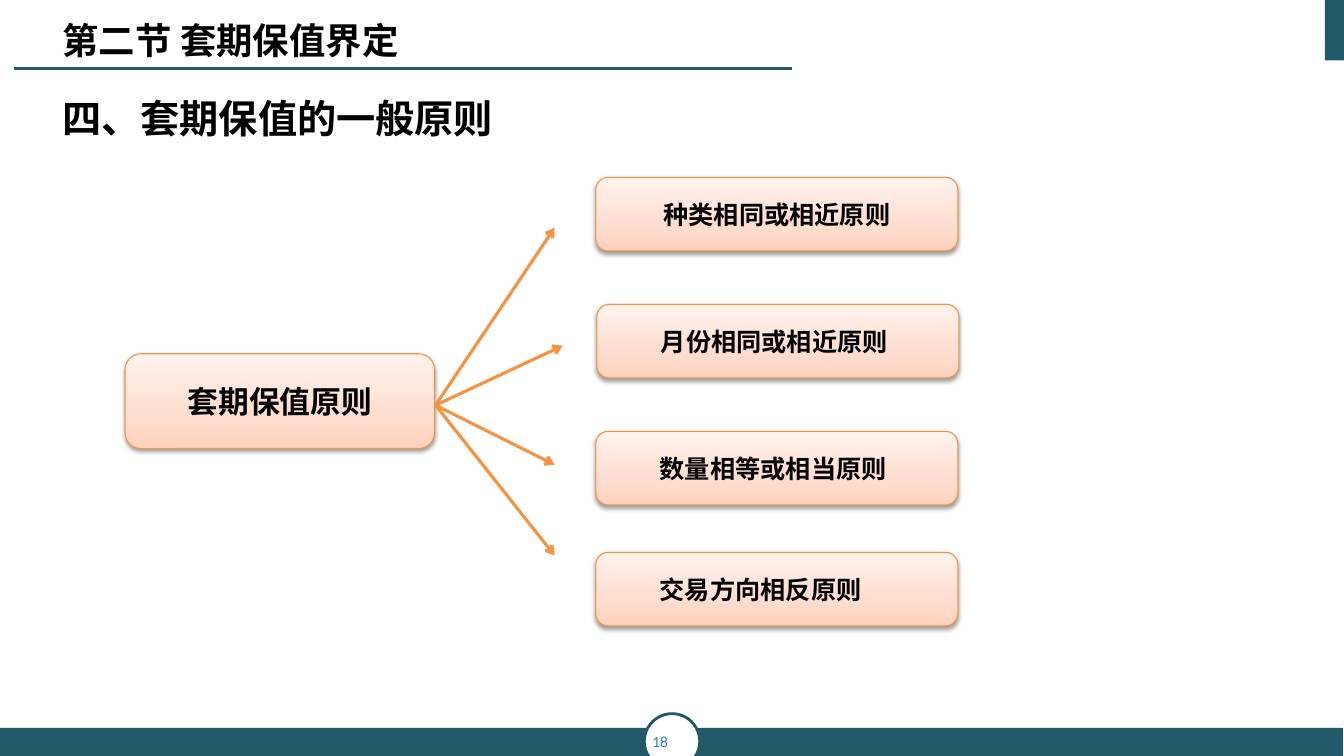
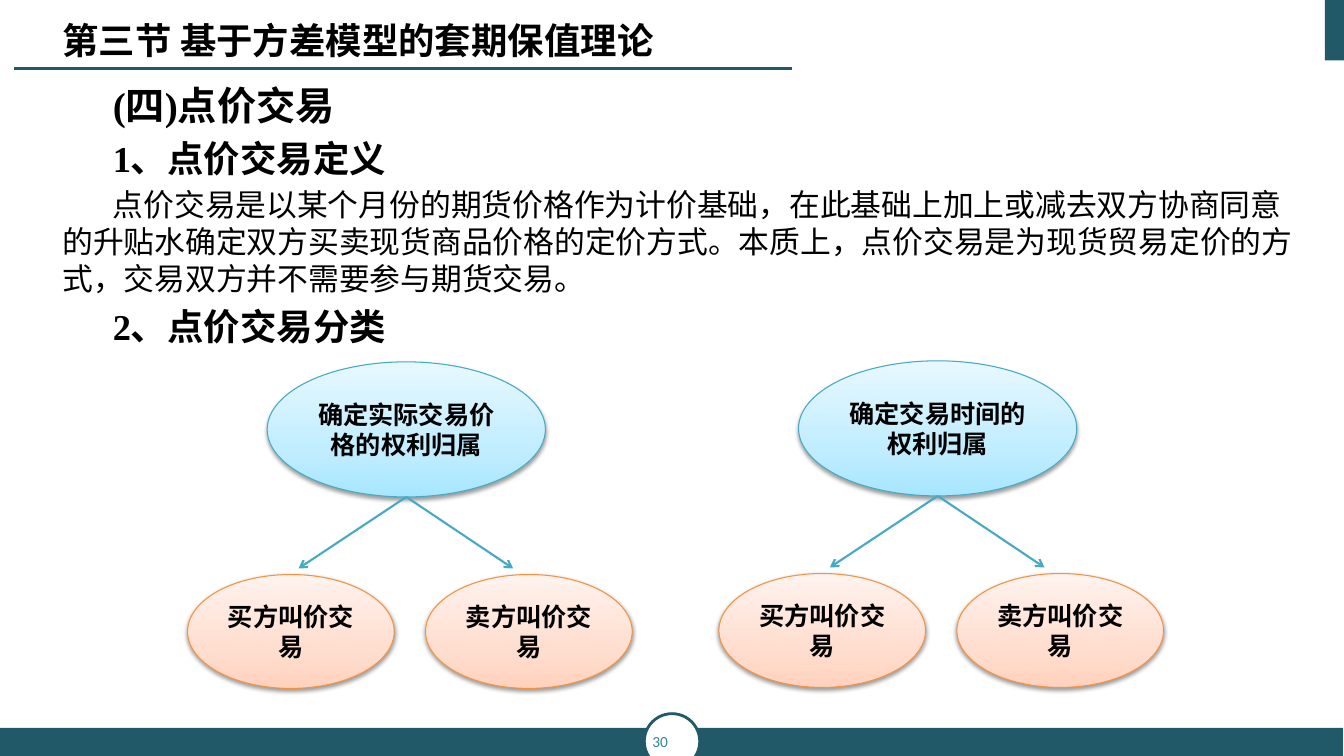
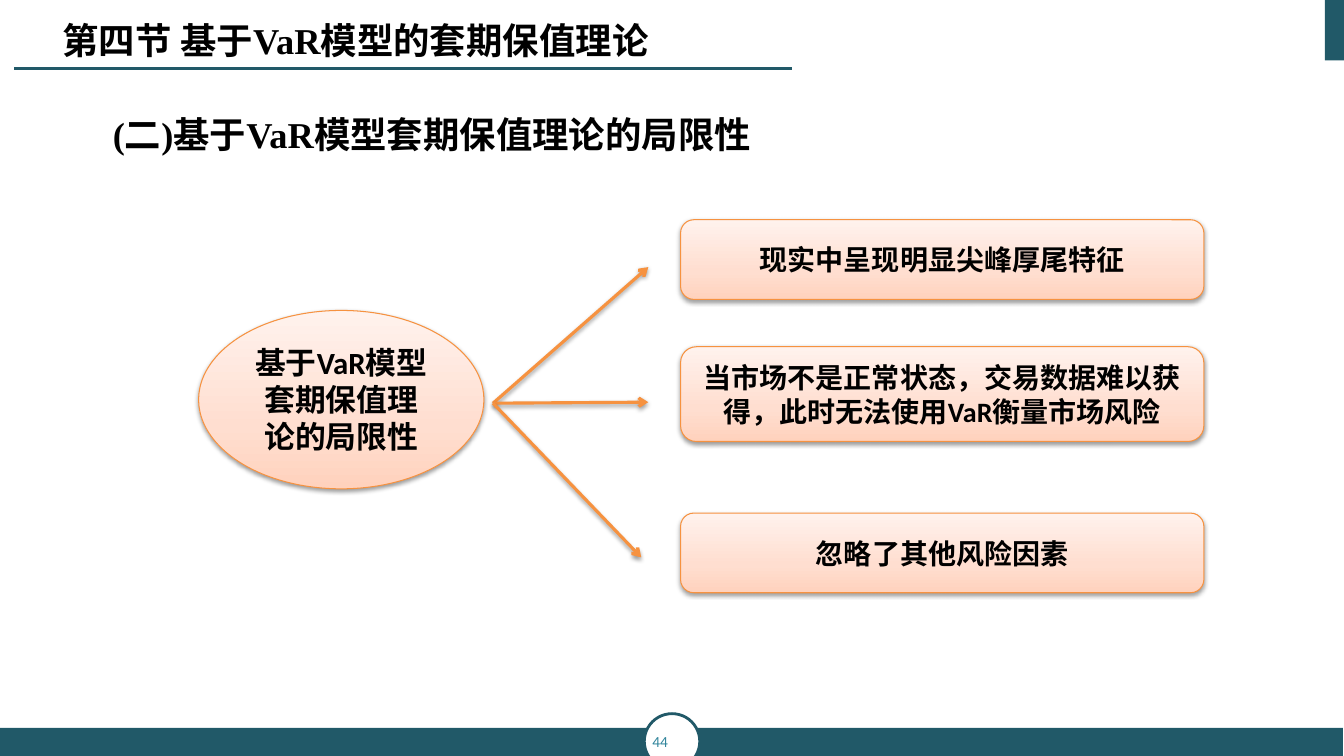
from pptx import Presentation
from pptx.dml.color import RGBColor
from pptx.enum.shapes import MSO_CONNECTOR as Link, MSO_SHAPE as Kind
from pptx.enum.text import MSO_ANCHOR as Anchor, MSO_AUTO_SIZE as Fit, PP_ALIGN as Align
from pptx.oxml import parse_xml
from pptx.oxml.ns import nsdecls, qn
from pptx.util import Inches, Pt
from lxml.etree import SubElement

TEAL = RGBColor(0x21, 0x59, 0x68)
AQUA = RGBColor(0x31, 0x85, 0x9C)
BLACK = RGBColor(0, 0, 0)
WHITE = RGBColor(0xFF, 0xFF, 0xFF)
ORANGE = RGBColor(0xF6, 0x92, 0x40)
BLUE = RGBColor(0x46, 0xAA, 0xC5)
PEACH = [RGBColor(0xFF, 0xD2, 0xBD), RGBColor(0xFF, 0xDE, 0xD0), RGBColor(0xFF, 0xF2, 0xED)]
SKY = [RGBColor(0xA7, 0xE6, 0xFF), RGBColor(0xC1, 0xED, 0xFF), RGBColor(0xE7, 0xF8, 0xFF)]
STOPS = [0, 35000, 100000]
SANS, SERIF, BODY = "Noto Sans CJK SC", "Times New Roman", "Calibri"
SHADOW = (
    f'<a:effectLst {nsdecls("a")}><a:outerShdw blurRad="40000" dist="20000" dir="5400000" rotWithShape="0">'
    '<a:srgbClr val="000000"><a:alpha val="38000"/></a:srgbClr></a:outerShdw></a:effectLst>'
)
PLAIN = f'<a:effectLst {nsdecls("a")}/>'


def style(par, size, face, bold=True, color=BLACK):
    font = par.font
    font.size, font.bold, font.name = Pt(size), bold, face
    font.color.rgb = color


deck = Presentation()
deck.slide_width, deck.slide_height = Inches(13.33), Inches(7.5)
layout = deck.slide_layouts[5]
head = layout.placeholders[0]
head.left, head.top, head.width, head.height = Inches(0.52), Inches(0.13), Inches(7.8), Inches(0.54)
head.text_frame.vertical_anchor = Anchor.TOP

titles = [
    (18, [("第二节 套期保值界定", SANS)]),
    (30, [("第三节 基于方差模型的套期保值理论", SANS)]),
    (44, [("第四节 基于", SANS), ("VaR", SERIF), ("模型的套期保值理论", SANS)]),
]
slides = [deck.slides.add_slide(layout) for _ in titles]

first = slides[0].shapes
for x, y, w, h in [(13.14, 0, 0.2, 0.6), (0, 7.22, 13.32, 0.28)]:
    band = first.add_shape(Kind.RECTANGLE, Inches(x), Inches(y), Inches(w), Inches(h))
    band.shadow.inherit = False
    band.fill.solid()
    band.fill.fore_color.rgb = TEAL
    band.line.fill.background()
    layout.shapes.element.append(band.element)
rule = first.add_connector(Link.STRAIGHT, Inches(0.14), Inches(0.68), Inches(7.86), Inches(0.68))
rule.line.color.rgb = TEAL
rule.line.width = Pt(1.5)
rule.element.spPr.append(parse_xml(PLAIN))
layout.shapes.element.append(rule.element)

for slide, (page, parts) in zip(slides, titles):
    frame = slide.shapes.title.text_frame
    frame.auto_size = Fit.NONE
    par = frame.paragraphs[0]
    par.alignment = Align.LEFT
    style(par, 26, parts[0][1])
    for text, face in parts:
        run = par.add_run()
        run.text = text
        if face != parts[0][1]:
            run.font.name = face
    disc = slide.shapes.add_shape(Kind.OVAL, Inches(6.39), Inches(7.08), Inches(0.55), Inches(0.55))
    disc.shadow.inherit = False
    disc.fill.solid()
    disc.fill.fore_color.rgb = WHITE
    disc.line.color.rgb = TEAL
    disc.line.width = Pt(2)
    disc.text_frame.margin_left = disc.text_frame.margin_right = 0
    disc.text_frame.text = str(page)
    style(disc.text_frame.paragraphs[0], 11, BODY, False, AQUA)

quote = (
    "点价交易是以某个月份的期货价格作为计价基础，在此基础上加上或减去双方协商同意的升贴水确定双方买卖现货商品价格的定价方式。"
    "本质上，点价交易是为现货贸易定价的方式，交易双方并不需要参与期货交易。"
)
texts = [
    (0.89, 4.8, 0.65, BODY, 0, 1, [("四、套期保值的一般原则", 28, True)]),
    (0.76, 12.52, 2.8, SERIF, 0.5, 1, [
        ("(四)点价交易", 28, True),
        ("1、点价交易定义", 26, True),
        (quote, 22, False),
        ("2、点价交易分类", 26, True),
    ]),
    (0.76, 12.52, 1, SERIF, 0.5, 1.7, [("(二)基于VaR模型套期保值理论的局限性", 26, True)]),
]
for slide, (y, w, h, face, dent, pitch, rows) in zip(slides, texts):
    frame = slide.shapes.add_textbox(Inches(0.52), Inches(y), Inches(w), Inches(h)).text_frame
    frame.word_wrap = True
    for n, (text, size, bold) in enumerate(rows):
        par = frame.add_paragraph() if n else frame.paragraphs[0]
        par.text = text
        par.line_spacing = pitch
        if n:
            par.space_before = Pt(size * 0.2)
        par._p.get_or_add_pPr().set("indent", str(Inches(dent)))
        style(par, size, face, bold)

ROUND, OVAL = Kind.ROUNDED_RECTANGLE, Kind.OVAL
cards = [
    (0, ROUND, 1.24, 3.51, 3.07, 0.94, "套期保值原则", 22, BODY, 0, PEACH, ORANGE),
    (2, OVAL, 1.97, 3.08, 2.83, 1.77, "基于VaR模型套期保值理论的局限性", 22, BODY, 0, PEACH, ORANGE),
]
for x, y, text, dent in [
    (5.91, 1.76, "种类相同或相近原则", 0),
    (5.92, 3.02, "月份相同或相近原则", 0.5),
    (5.91, 4.28, "数量相等或相当原则", 0.5),
    (5.91, 5.48, "交易方向相反原则", 0.5),
]:
    cards.append((0, ROUND, x, y, 3.59, 0.73, text, 18, BODY, dent, PEACH, ORANGE))
for y, h, face, text in [
    (2.18, 0.79, SERIF, "现实中呈现明显尖峰厚尾特征"),
    (3.44, 0.94, BODY, "当市场不是正常状态，交易数据难以获得，此时无法使用VaR衡量市场风险"),
    (5.09, 0.79, BODY, "忽略了其他风险因素"),
]:
    cards.append((2, ROUND, 6.75, y, 5.19, h, text, 20, face, 0, PEACH, ORANGE))

arrows = [
    (0, 4.32, 4.02, x, y, ORANGE, 2.25, PLAIN)
    for x, y in [(5.5, 2.26), (5.58, 3.43), (5.5, 4.61), (5.5, 5.51)]
]
arrows += [
    (2, 4.89, 4, x, y, ORANGE, 2.25, SHADOW)
    for x, y in [(6.43, 2.65), (6.43, 3.99), (6.36, 5.53)]
]
for x, y, text in [(2.65, 3.59, "确定实际交易价格的权利归属"), (7.92, 3.58, "确定交易时间的权利归属")]:
    cards.append((1, OVAL, x, y, 2.76, 1.34, text, 18, BODY, 0, SKY, BLUE))
    for side, tip, leaf in [(-0.79, 0.31, "买方叫价交易"), (1.57, 2.44, "卖方叫价交易")]:
        cards.append((1, OVAL, x + side, y + 2.11, 2.05, 1.13, leaf, 18, BODY, 0, PEACH, ORANGE))
        arrows.append((1, x + 1.38, y + 1.34, x + tip, y + 2.05, BLUE, 1.5, PLAIN))

for n, kind, x, y, w, h, text, size, face, dent, tints, edge in cards:
    card = slides[n].shapes.add_shape(kind, Inches(x), Inches(y), Inches(w), Inches(h))
    stops = "".join(
        f'<a:gs pos="{pos}"><a:srgbClr val="{tint}"/></a:gs>' for pos, tint in zip(STOPS, tints)
    )
    props = card.element.spPr
    props.append(parse_xml(
        f'<a:gradFill {nsdecls("a")} rotWithShape="1"><a:gsLst>{stops}</a:gsLst>'
        '<a:lin ang="16200000" scaled="0"/></a:gradFill>'
    ))
    card.line.color.rgb = edge
    card.line.width = Pt(0.75)
    props.append(parse_xml(SHADOW))
    frame = card.text_frame
    frame.word_wrap = True
    frame.vertical_anchor = Anchor.MIDDLE
    frame.text = text
    par = frame.paragraphs[0]
    par.alignment = Align.LEFT if dent else Align.CENTER
    par._p.get_or_add_pPr().set("indent", str(Inches(dent)))
    style(par, size, face)

for n, x, y, right, low, color, width, glow in arrows:
    arrow = slides[n].shapes.add_connector(Link.STRAIGHT, Inches(x), Inches(y), Inches(right), Inches(low))
    arrow.line.color.rgb = color
    arrow.line.width = Pt(width)
    SubElement(arrow.line._get_or_add_ln(), qn("a:tailEnd"), type="arrow")
    arrow.element.spPr.append(parse_xml(glow))

deck.save("out.pptx")
